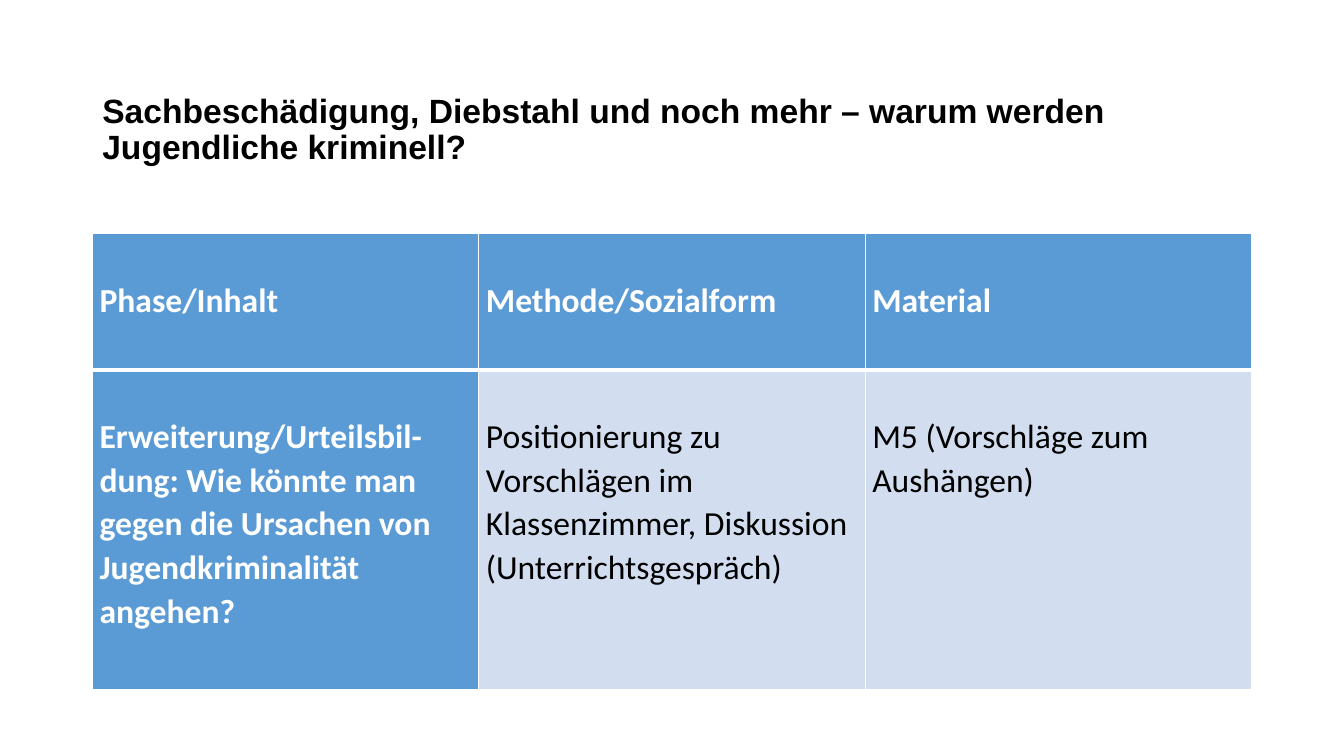
from dataclasses import dataclass

from lxml.etree import SubElement
from pptx import Presentation
from pptx.dml.color import RGBColor as RGB
from pptx.enum.text import MSO_ANCHOR as Anchor
from pptx.oxml.ns import qn
from pptx.util import Cm, Pt


@dataclass(frozen=True)
class Theme:
    title_font: str = "Arial"
    body_font: str = "Calibri"
    size: int = 24
    black: str = "000000"
    white: str = "FFFFFF"
    accent: str = "5B9BD5"
    pale: str = "D2DEEF"
    thin: int = 1
    thick: int = 3


@dataclass(frozen=True)
class CellSpec:
    lines: tuple[str, ...]
    emphasis: bool = True


THEME = Theme()
TITLE = ("Sachbeschädigung, Diebstahl und noch mehr – "
         "warum werden Jugendliche kriminell?")
ROWS = (
    (CellSpec(("Phase/Inhalt",)),
     CellSpec(("Methode/Sozialform",)),
     CellSpec(("Material",))),
    (CellSpec(("Erweiterung/Urteilsbil-dung: Wie könnte man gegen die "
               "Ursachen von Jugendkriminalität angehen?",)),
     CellSpec(("Positionierung zu Vorschlägen im Klassenzimmer, Diskussion",
               "(Unterrichtsgespräch)"), emphasis=False),
     CellSpec(("M5 (Vorschläge zum Aushängen)",), emphasis=False)),
)
LEFT, WIDTH = 2.33, 29.21
ROW_HEIGHTS = (3.43, 8.05)


def write(tf, *lines: str, font: str, color: str, bold: bool,
          spacing: float) -> None:
    """Fill a text frame with one paragraph per line."""
    tf.word_wrap = True
    for i, line in enumerate(lines):
        p = tf.add_paragraph() if i else tf.paragraphs[0]
        p.line_spacing = spacing
        r = p.add_run()
        r.text = line
        r.font.name = font
        r.font.size = Pt(THEME.size)
        r.font.bold = bold
        r.font.color.rgb = RGB.from_string(color)


def set_borders(cell, top: int, bottom: int) -> None:
    """Draw white lines round a cell, with widths in points."""
    tc_pr = cell._tc.get_or_add_tcPr()
    widths = {"L": THEME.thin, "R": THEME.thin, "T": top, "B": bottom}
    for side, width in widths.items():
        ln = SubElement(tc_pr, qn(f"a:ln{side}"), w=str(Pt(width)))
        fill = SubElement(ln, qn("a:solidFill"))
        SubElement(fill, qn("a:srgbClr"), val=THEME.white)


def add_title(slide) -> None:
    sp = slide.shapes.add_textbox(Cm(LEFT), Cm(1.01), Cm(WIDTH), Cm(3.68))
    tf = sp.text_frame
    tf.vertical_anchor = Anchor.MIDDLE
    tf.margin_top = Cm(1.02)  # sets the title below the box's middle
    write(tf, TITLE, font=THEME.title_font, color=THEME.black, bold=True,
          spacing=0.9)


def add_plan(slide) -> None:
    n_rows, n_cols = len(ROWS), len(ROWS[0])
    table = slide.shapes.add_table(
        n_rows, n_cols, Cm(LEFT), Cm(5.89), Cm(WIDTH), Cm(sum(ROW_HEIGHTS))
    ).table
    table.first_col = True
    for col in table.columns:
        col.width = Cm(WIDTH / n_cols)
    for i, (specs, height) in enumerate(zip(ROWS, ROW_HEIGHTS)):
        table.rows[i].height = Cm(height)
        # The rule below the header is heavier than the others
        top = THEME.thick if i == 1 else THEME.thin
        bottom = THEME.thick if i == 0 else THEME.thin
        for j, item in enumerate(specs):
            cell = table.cell(i, j)
            set_borders(cell, top, bottom)
            cell.fill.solid()
            cell.fill.fore_color.rgb = RGB.from_string(
                THEME.accent if item.emphasis else THEME.pale)
            cell.margin_left = cell.margin_right = Cm(0.18)
            cell.margin_top, cell.margin_bottom = Cm(1.1), Cm(0)
            write(cell.text_frame, *item.lines, font=THEME.body_font,
                  color=THEME.white if item.emphasis else THEME.black,
                  bold=item.emphasis, spacing=1.07)


def main() -> None:
    prs = Presentation()
    prs.slide_width, prs.slide_height = Cm(33.87), Cm(19.05)
    slide = prs.slides.add_slide(prs.slide_layouts[6])
    # Heading
    add_title(slide)
    # Lesson plan
    add_plan(slide)
    prs.save("out.pptx")


if __name__ == "__main__":
    main()
